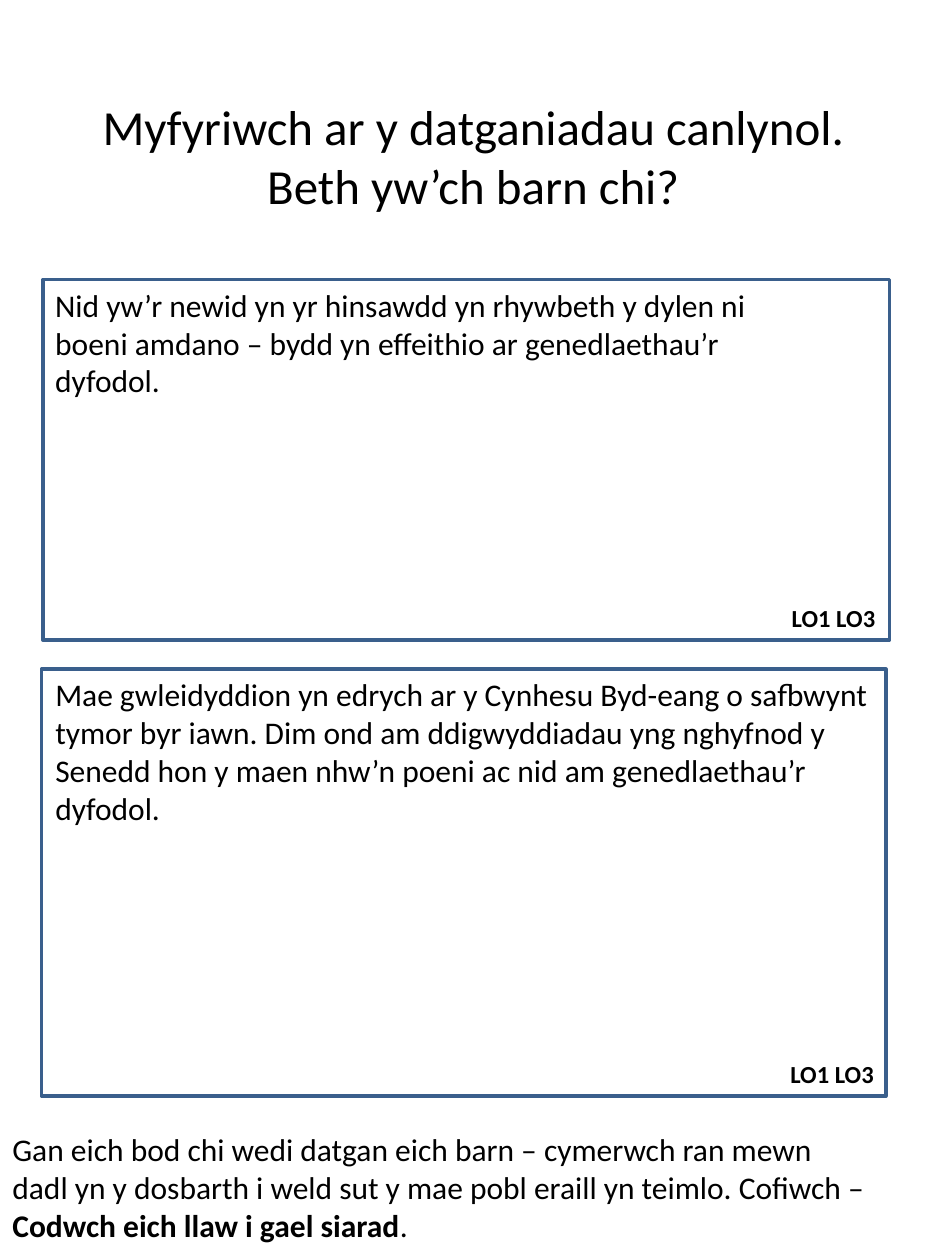
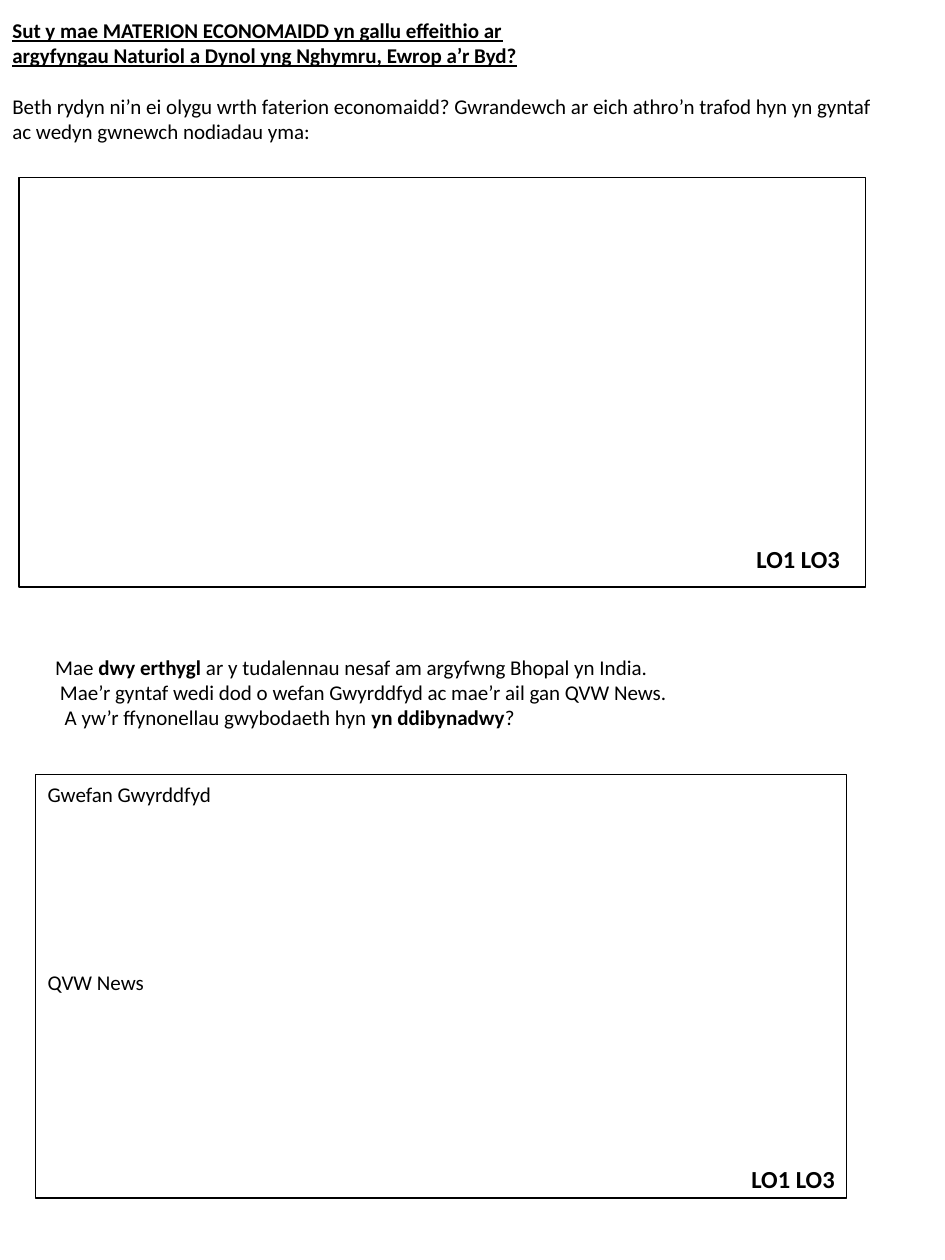
from pptx import Presentation
from pptx.dml.color import RGBColor
from pptx.enum.shapes import MSO_SHAPE as Form
from pptx.enum.text import MSO_ANCHOR as Anchor, PP_ALIGN as Align
from pptx.util import Pt

BLACK = RGBColor(0, 0, 0)
WHITE = RGBColor(255, 255, 255)
BLUE = RGBColor(0x3A, 0x5F, 0x8C)
FONT = "Calibri"


def panel(page, spot, line, thick, fill=None):
    box = page.shapes.add_shape(Form.RECTANGLE, *map(Pt, spot))
    box.shadow.inherit = False
    box.line.color.rgb = line
    box.line.width = Pt(thick)
    if fill is None:
        box.fill.background()
    else:
        box.fill.solid()
        box.fill.fore_color.rgb = fill
    return box


def write(box, *texts, size=18, align=Align.LEFT, anchor=Anchor.TOP,
          wrap=True, gap=0, step=0, under=False):
    """Fill box with one paragraph per text; *stars* mark bold words.

    gap is the space between paragraphs, step the extra indent of each,
    and under underlines the bold words.
    """
    frame = box.text_frame
    frame.word_wrap = wrap
    frame.vertical_anchor = anchor
    for i, text in enumerate(texts):
        para = frame.paragraphs[0] if i == 0 else frame.add_paragraph()
        para.alignment = align
        para.space_before = Pt(gap if i else 0)
        if step:
            para._p.get_or_add_pPr().set("marL", str(Pt(i * step)))
        for j, part in enumerate(text.split("*")):
            for k, words in enumerate(part.split("\n")):
                if k:
                    para.add_line_break()
                    mark = para._p[-1].makeelement(
                        "{http://schemas.openxmlformats.org/drawingml/2006/main}rPr",
                        {"sz": str(size * 100)})
                    para._p[-1].append(mark)
                if not words:
                    continue
                run = para.add_run()
                run.text = words
                font = run.font
                font.name, font.size = FONT, Pt(size)
                font.color.rgb = BLACK
                font.bold = j % 2 == 1
                font.underline = under and j % 2 == 1
    return frame


deck = Presentation()
deck.slide_width, deck.slide_height = Pt(540), Pt(720)
views, money = [deck.slides.add_slide(deck.slide_layouts[6]) for _ in range(2)]

# Statements to reflect on
panel(views, (23.8, 382.3, 482.4, 244.1), BLUE, 2)
panel(views, (24.5, 159.8, 483.8, 205.9), BLUE, 2)

title = views.shapes.add_textbox(Pt(27.4), Pt(28.8), Pt(486), Pt(120.2))
write(title, "Myfyriwch ar y datganiadau canlynol. Beth yw’ch barn chi?",
      size=28, align=Align.CENTER, anchor=Anchor.MIDDLE)

for spot, text in [
    ((24.5, 159.8, 413.3, 225.4),
     "Nid yw’r newid yn yr hinsawdd yn rhywbeth y dylen ni\n"
     "boeni amdano – bydd yn effeithio ar genedlaethau’r\n"
     "dyfodol."),
    ((24.5, 382.3, 483.8, 94.3),
     "Mae gwleidyddion yn edrych ar y Cynhesu Byd-eang o safbwynt\n"
     "tymor byr iawn. Dim ond am ddigwyddiadau yng nghyfnod y\n"
     "Senedd hon y maen nhw’n poeni ac nid am genedlaethau’r\n"
     "dyfodol."),
    ((0, 642.2, 517.7, 72.7),
     "Gan eich bod chi wedi datgan eich barn – cymerwch ran mewn\n"
     "dadl yn y dosbarth i weld sut y mae pobl eraill yn teimlo. Cofiwch –\n"
     "*Codwch eich llaw i gael siarad*."),
]:
    write(views.shapes.add_textbox(*map(Pt, spot)), text)

# Economic issues and the two articles
panel(money, (10.8, 101.5, 483.8, 234), BLACK, 0.75, WHITE)
notes = panel(money, (20.2, 442.8, 463.7, 241.9), BLACK, 0.75, WHITE)
write(notes, "Gwefan Gwyrddfyd", "QVW News", size=12, gap=93.35)

intro = money.shapes.add_textbox(Pt(0), Pt(6.5), Pt(511.2), Pt(94.3))
write(intro,
      "*Sut y mae MATERION ECONOMAIDD yn gallu effeithio ar\n"
      "argyfyngau Naturiol a Dynol yng Nghymru, Ewrop a’r Byd?*",
      "Beth rydyn ni’n ei olygu wrth faterion economaidd? "
      "Gwrandewch ar eich athro’n trafod hyn yn gyntaf\n"
      "ac wedyn gwnewch nodiadau yma:",
      size=12, gap=14.65, under=True)

task = money.shapes.add_textbox(Pt(24.5), Pt(326.2), Pt(365), Pt(116.6))
frame = write(task,
              "Mae *dwy erthygl* ar y tudalennau nesaf am argyfwng Bhopal yn India.",
              "Mae’r gyntaf wedi dod o wefan Gwyrddfyd ac mae’r ail gan QVW News.",
              "A yw’r ffynonellau gwybodaeth hyn *yn ddibynadwy*?",
              size=12, anchor=Anchor.MIDDLE, step=2.7)
frame.margin_top = Pt(25.4)

# Learning outcome tags
for page, left, top in [(views, 445, 341.3), (views, 444.2, 601.9),
                        (money, 424.8, 307.4), (money, 421.9, 661.7)]:
    tag = page.shapes.add_textbox(Pt(left), Pt(top), Pt(62.6), Pt(24.5))
    write(tag, "*LO1 LO3*", size=14, align=Align.CENTER, wrap=False)

deck.save("out.pptx")
